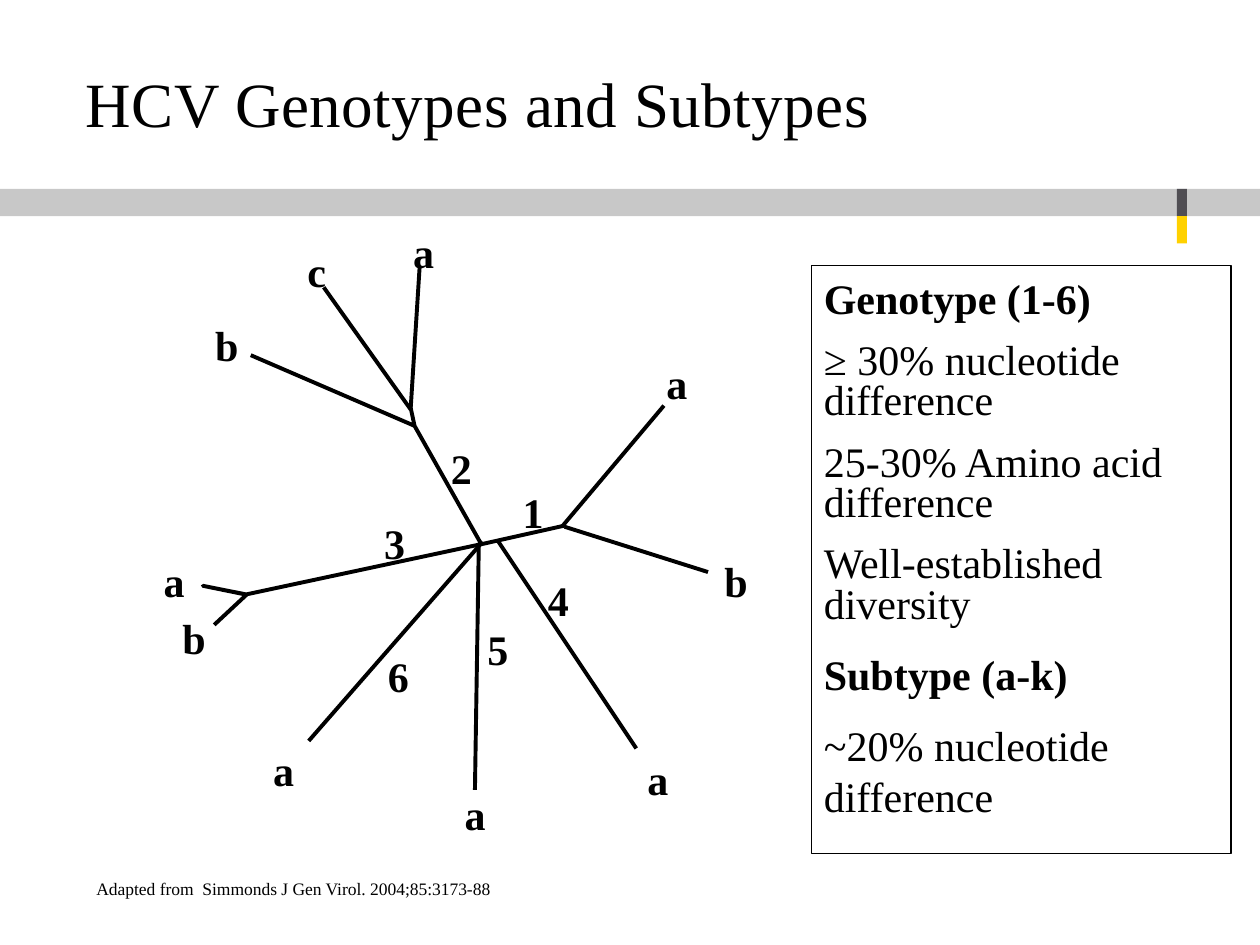
from lxml import etree
from pptx import Presentation
from pptx.dml.color import RGBColor
from pptx.enum.shapes import MSO_CONNECTOR as CONN, MSO_SHAPE as SHAPE
from pptx.enum.text import MSO_ANCHOR as ANCHOR, MSO_AUTO_SIZE as AUTO, PP_ALIGN as ALIGN
from pptx.oxml.ns import qn
from pptx.util import Pt

BLACK = RGBColor(0x00, 0x00, 0x00)
WHITE = RGBColor(0xFF, 0xFF, 0xFF)
GREY = RGBColor(0xC8, 0xC8, 0xC8)
DARK = RGBColor(0x50, 0x4E, 0x53)
YELLOW = RGBColor(0xFF, 0xD1, 0x00)

FONT = "Times New Roman"
BRANCH_WIDTH = 2.25
LABEL_WIDTHS = {"b": 25.9, "c": 23}

# Tree coordinates are points from the top left of the tree's box.
TRUNK = [(57.3, 77), (150.9, 117.4), (148.7, 107.3), (150.9, 117.4), (189, 185),
         (54.4, 213.8), (29.9, 208.8), (55, 213.8), (36.4, 231.1)]
BRANCHES = [
    ((148.7, 107.3), (153.8, 26.6)),
    ((99, 38.2), (148.7, 108)),
    ((293.4, 105.8), (235.1, 175)),
    ((318.6, 200.9), (236.6, 175)),
    ((277.6, 301.7), (198.4, 182.9)),
    ((237.3, 174.2), (189, 185)),
    ((185.4, 325.4), (187.6, 185)),
    ((90.4, 297.4), (189.8, 183.6)),
]
LABELS = {
    "1": [(205.6, 148.3)],
    "2": [(164.6, 123.1)],
    "3": [(126.4, 166.3)],
    "4": [(220, 198.7)],
    "5": [(185.4, 226.8)],
    "6": [(128.6, 241.9)],
    "a": [(0.4, 187.9), (287.7, 74.9), (143, 0), (63, 295.9), (172.5, 321.1), (276.9, 301)],
    "b": [(320.8, 187.9), (29.9, 53.3), (11.2, 220.3)],
    "c": [(82.5, 10.8)],
}

# Text, bold, line spacing, space before
DEFINITIONS = [
    ("Genotype (1-6)", True, 1.0, 3),
    ("≥ 30% nucleotide difference", False, 0.8, 12),
    ("25-30% Amino acid difference", False, 0.8, 12),
    ("Well-established diversity", False, 0.8, 12),
    ("Subtype (a-k)", True, 1.0, 12),
    ("~20% nucleotide difference", False, 1.0, 12),
]


def set_attrs(obj, values):
    for name, value in values.items():
        setattr(obj, name, value)


def add_run(p, text, size, bold=False):
    r = p.add_run()
    r.text = text
    set_attrs(r.font, {"name": FONT, "size": Pt(size), "bold": bold})
    r.font.color.rgb = BLACK
    return r


def add_rect(slide, left, top, width, height, fill):
    sp = slide.shapes.add_shape(SHAPE.RECTANGLE, Pt(left), Pt(top), Pt(width), Pt(height))
    sp.shadow.inherit = False
    sp.fill.solid()
    sp.fill.fore_color.rgb = fill
    sp.line.fill.background()
    return sp


def add_label(slide, text, left, top, width, height, size, bold=False):
    sp = slide.shapes.add_textbox(Pt(left), Pt(top), Pt(width), Pt(height))
    tf = sp.text_frame
    set_attrs(tf, {"word_wrap": False, "auto_size": AUTO.SHAPE_TO_FIT_TEXT})
    add_run(tf.paragraphs[0], text, size, bold)


def add_title(slide, left, top, width, height):
    sp = slide.shapes.title
    set_attrs(sp, {"left": Pt(left), "top": Pt(top), "width": Pt(width), "height": Pt(height)})
    tf = sp.text_frame
    set_attrs(tf, {"auto_size": AUTO.NONE, "word_wrap": True, "vertical_anchor": ANCHOR.BOTTOM,
                   "margin_top": 0, "margin_bottom": 0})
    p = tf.paragraphs[0]
    p.alignment = ALIGN.LEFT
    r = add_run(p, "HCV Genotypes and Subtypes", 36)
    r.font._element.set("spc", "30")


def add_band(slide, left, top, width, height):
    """Grey bar with a dark and a yellow marker near its right end."""
    marker_left, marker_width = left + width - 47.5, 5.8
    add_rect(slide, left, top, width, height, GREY)
    for row, color in enumerate((DARK, YELLOW)):
        add_rect(slide, marker_left, top + row * height, marker_width, height, color)


def add_definitions(slide, left, top, width, height):
    sp = add_rect(slide, left, top, width, height, WHITE)
    sp.fill.background()
    sp.line.color.rgb = BLACK
    sp.line.width = Pt(0.75)
    tf = sp.text_frame
    set_attrs(tf, {"word_wrap": True, "vertical_anchor": ANCHOR.TOP})
    for i, (text, bold, spacing, before) in enumerate(DEFINITIONS):
        p = tf.add_paragraph() if i else tf.paragraphs[0]
        set_attrs(p, {"alignment": ALIGN.LEFT, "line_spacing": spacing,
                      "space_before": Pt(before)})
        add_run(p, text, 24, bold)


def add_tree(slide, left, top):
    """Unrooted tree of genotypes (numbers) and subtypes (letters)."""
    start, *rest = [(Pt(x), Pt(y)) for x, y in TRUNK]
    builder = slide.shapes.build_freeform(*start)
    builder.add_line_segments(rest, close=False)
    trunk = builder.convert_to_shape(Pt(left), Pt(top))
    trunk.shadow.inherit = False
    trunk.fill.background()
    lines = [trunk]

    for text, spots in LABELS.items():
        for x, y in spots:
            add_label(slide, text, left + x, top + y, LABEL_WIDTHS.get(text, 24.5), 32.4, 24, True)

    for (x1, y1), (x2, y2) in BRANCHES:
        branch = slide.shapes.add_connector(CONN.STRAIGHT, Pt(left + x1), Pt(top + y1),
                                            Pt(left + x2), Pt(top + y2))
        etree.SubElement(branch._element.spPr, qn("a:effectLst"))
        lines.append(branch)

    for shape in lines:
        shape.line.color.rgb = BLACK
        shape.line.width = Pt(BRANCH_WIDTH)


def main():
    prs = Presentation()
    set_attrs(prs, {"slide_width": Pt(720), "slide_height": Pt(540)})
    slide = prs.slides.add_slide(prs.slide_layouts[5])
    add_band(slide, 0, 108, 720, 15.6)
    add_title(slide, 41.8, 31.7, 612, 48.2)
    add_definitions(slide, 463.7, 151.9, 239.8, 336)
    add_label(slide, "Adapted from  Simmonds J Gen Virol. 2004;85:3173-88", 48, 498.2, 243.4, 19.4, 10)
    add_tree(slide, 86, 126)
    prs.save("out.pptx")


if __name__ == "__main__":
    main()
